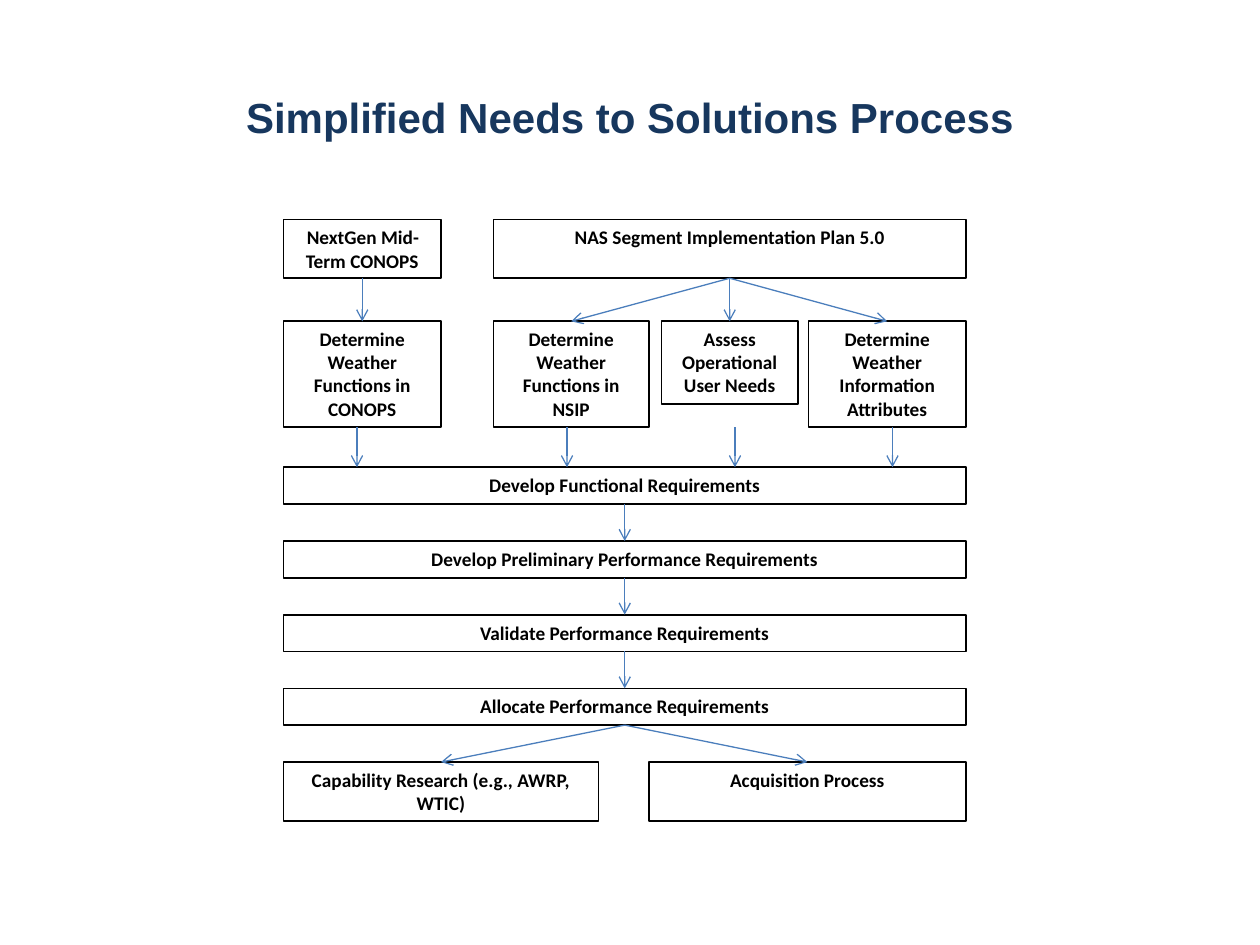
"""Build a one-page flowchart of the simplified needs to solutions process."""
from lxml import etree
from pptx import Presentation
from pptx.dml.color import RGBColor
from pptx.enum.shapes import MSO_CONNECTOR, MSO_SHAPE
from pptx.enum.text import MSO_ANCHOR, MSO_AUTO_SIZE, PP_ALIGN
from pptx.oxml.ns import qn
from pptx.util import Inches, Pt

RECTANGLE = MSO_SHAPE.RECTANGLE
STRAIGHT = MSO_CONNECTOR.STRAIGHT
CENTER = PP_ALIGN.CENTER
TOP, MIDDLE = MSO_ANCHOR.TOP, MSO_ANCHOR.MIDDLE
GROW = MSO_AUTO_SIZE.SHAPE_TO_FIT_TEXT
TOP_SIDE, BOTTOM_SIDE = 0, 2
COLORS = {"title": "17375E", "text": "000000", "border": "000000",
          "fill": "FFFFFF", "arrow": "4B7EBC"}

deck = Presentation()
deck.slide_width, deck.slide_height = Inches(10), Inches(7.5)
page = deck.slides.add_slide(deck.slide_layouts[6])
COLUMN = deck.slide_width / 120
ROW = deck.slide_height / 90


def write_text(box, text, font_name, size, color, anchor):
    frame = box.text_frame
    frame.word_wrap = True
    frame.vertical_anchor = anchor
    frame.text = text
    para = frame.paragraphs[0]
    para.alignment = CENTER
    font = para.runs[0].font
    font.name, font.size, font.bold = font_name, Pt(size), True
    font.color.rgb = RGBColor.from_string(COLORS[color])


def add_arrow(start_x, start_y, end_x, end_y):
    arrow = page.shapes.add_connector(
        STRAIGHT, round(start_x), round(start_y), round(end_x), round(end_y))
    arrow.line.color.rgb = RGBColor.from_string(COLORS["arrow"])
    arrow.line.width = Pt(0.75)
    etree.SubElement(arrow.line._get_or_add_ln(), qn("a:tailEnd"), type="arrow")
    etree.SubElement(arrow._element.spPr, qn("a:effectLst"))
    return arrow


title = page.shapes.add_textbox(
    round(6 * COLUMN), round(3.6 * ROW), round(108 * COLUMN), round(15 * ROW))
write_text(title, "Simplified Needs to Solutions Process", "Arial", 24, "title", MIDDLE)

LEFT, FULL = 27, 65
SOURCE_ROW, TASK_ROW, BAR_ROW, BAR_STEP = 20.9, 30.6, 44.5, 7.02
BAR, DOUBLE, TRIPLE, QUADRUPLE = 3.5, 5.6, 7.9, 10.1
OUTCOME_ROW = BAR_ROW + 4 * BAR_STEP

steps = {
    "plan": (47, SOURCE_ROW, 45, DOUBLE, "NAS Segment Implementation Plan 5.0"),
    "conops": (LEFT, SOURCE_ROW, 15, DOUBLE, "NextGen Mid-Term CONOPS"),
    "plan functions": (47, TASK_ROW, 14.8, QUADRUPLE,
                       "Determine Weather Functions in NSIP"),
    "conops functions": (LEFT, TASK_ROW, 15, QUADRUPLE,
                         "Determine Weather Functions in CONOPS"),
    "user needs": (63, TASK_ROW, 13, TRIPLE, "Assess Operational User Needs"),
    "attributes": (77, TASK_ROW, 15, QUADRUPLE,
                   "Determine Weather Information Attributes"),
    "research": (LEFT, OUTCOME_ROW, 30, DOUBLE,
                 "Capability Research (e.g., AWRP, WTIC)"),
    "acquisition": (61.8, OUTCOME_ROW, 30.2, DOUBLE, "Acquisition Process"),
}
bars = {
    "functional": "Develop Functional Requirements",
    "preliminary": "Develop Preliminary Performance Requirements",
    "validate": "Validate Performance Requirements",
    "allocate": "Allocate Performance Requirements",
}
for index, (name, text) in enumerate(bars.items()):
    steps[name] = (LEFT, BAR_ROW + index * BAR_STEP, FULL, BAR, text)

boxes = {}
for name, (left, top, width, height, text) in steps.items():
    box = page.shapes.add_shape(
        RECTANGLE, round(left * COLUMN), round(top * ROW),
        round(width * COLUMN), round(height * ROW))
    box.shadow.inherit = False
    box.fill.solid()
    box.fill.fore_color.rgb = RGBColor.from_string(COLORS["fill"])
    box.line.color.rgb = RGBColor.from_string(COLORS["border"])
    box.line.width = Pt(1)
    write_text(box, text, "Calibri", 11, "text", TOP)
    box.text_frame.auto_size = GROW
    boxes[name] = box

links = [
    ("conops", "conops functions"),
    ("plan", "plan functions"),
    ("plan", "user needs"),
    ("plan", "attributes"),
    ("functional", "preliminary"),
    ("preliminary", "validate"),
    ("validate", "allocate"),
    ("allocate", "research"),
    ("allocate", "acquisition"),
]
for source, target in links:
    arrow = add_arrow(0, 0, 0, 0)
    arrow.begin_connect(boxes[source], BOTTOM_SIDE)
    arrow.end_connect(boxes[target], TOP_SIDE)

for column in (34, 54, 70, 85):
    add_arrow(column * COLUMN, (TASK_ROW + QUADRUPLE) * ROW,
              column * COLUMN, BAR_ROW * ROW)

deck.save("out.pptx")
